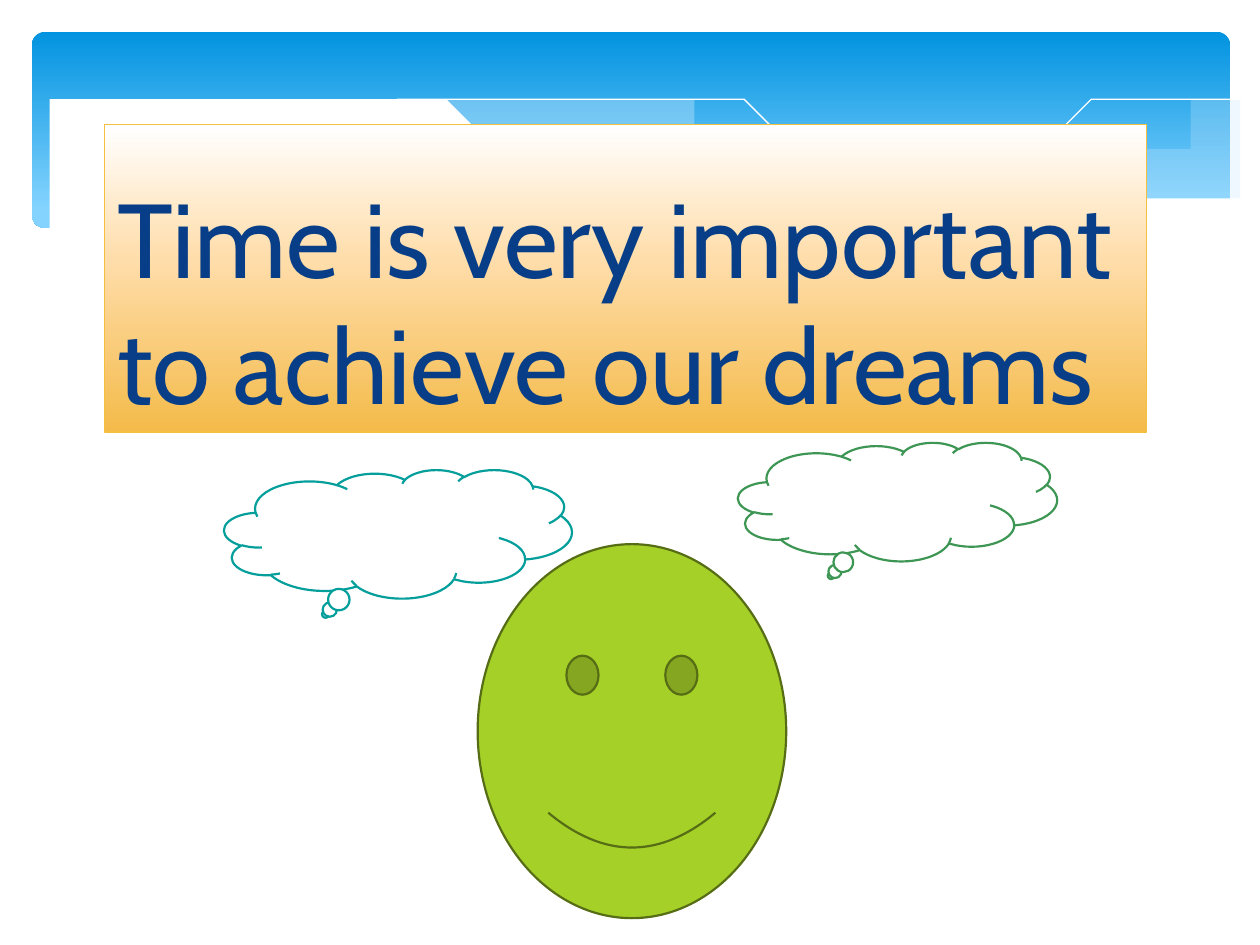
from dataclasses import dataclass
from itertools import chain
from typing import Optional

from lxml.etree import SubElement
from pptx import Presentation
from pptx.dml.color import RGBColor
from pptx.enum.shapes import MSO_SHAPE
from pptx.enum.text import MSO_ANCHOR, MSO_AUTO_SIZE, PP_ALIGN
from pptx.oxml.ns import qn
from pptx.util import Cm, Pt

Point = tuple[float, float]
Edge = list[Point]


@dataclass(frozen=True)
class Theme:
    font: str = "Cabin"
    title_size: int = 60
    title: str = "073E87"
    title_border: str = "F5C040"
    title_stops: tuple = ((0, "FFFFFF"), (44, "FFDDAA"), (100, "F4BB4A"))
    banner_stops: tuple = ((0, "0293E0"), (90, "83D3FE"))
    white: str = "FFFFFF"
    mist: str = "C6E7FC"
    face: str = "A5D028"
    face_line: str = "566D15"
    green: str = "3D9653"
    teal: str = "049E9B"


@dataclass(frozen=True)
class Figure:
    kind: MSO_SHAPE
    box: tuple[float, float, float, float]  # left, top, width, height in cm
    fill: str
    line: str


@dataclass(frozen=True)
class Wave:
    edges: list[Edge]  # each edge is a smooth curve through its points, in cm
    fill: Optional[str] = None
    line: Optional[str] = None
    opacity: int = 100
    closed: bool = True


THEME = Theme()

WAVES = [
    # Pale swell at the right
    Wave([[(24.82, 2.39), (23.42, 2.64), (21.89, 3), (19.81, 3.48), (16.81, 4.06)],
          [(16.81, 4.06), (18.26, 4.24), (19.86, 4.37), (21.23, 4.37), (22.61, 4.22),
           (23.8, 3.96), (24.82, 3.61)]],
         fill=THEME.mist, opacity=29),
    # Pale swell in the middle
    Wave([[(7.29, 2.18), (8.33, 2.06), (9.65, 2.03), (11.23, 2.11), (13.08, 2.34),
           (16, 2.95), (18.85, 3.61), (21.29, 4.06), (22.71, 4.24)],
          [(22.71, 4.24), (21.31, 4.39), (19.66, 4.37), (17.68, 4.19), (15.29, 3.81),
           (11.43, 2.95), (9.22, 2.46), (7.29, 2.18)]],
         fill=THEME.mist, opacity=40),
    # White hairlines
    Wave([[(7.87, 2.29), (8.74, 2.13), (10.59, 2.06), (12.42, 2.13), (14.78, 2.39),
           (17.68, 2.9), (20.22, 3.45), (23.06, 4.22)]],
         line=THEME.white, closed=False),
    Wave([[(15.6, 3.84), (17.68, 3.3), (19.74, 2.82), (22.02, 2.36), (23.5, 2.13),
           (24.8, 2.03)]],
         line=THEME.white, closed=False),
    # White wave that cuts off the banner
    Wave([[(0.58, 2.72), (1.17, 2.49), (2.16, 2.21), (3.35, 2.06), (4.9, 1.98),
           (6.88, 2.11), (8.64, 2.34), (11.35, 2.9), (14.1, 3.53), (16.46, 3.99),
           (18.9, 4.29), (20.9, 4.34), (22.53, 4.22), (23.88, 3.91), (24.82, 3.58)],
          [(24.82, 5.69), (0.58, 5.69)]],
         fill=THEME.white),
]

FIGURES = [
    Figure(MSO_SHAPE.SMILEY_FACE, (9.63, 10.97, 6.22, 7.54), THEME.face, THEME.face_line),
    Figure(MSO_SHAPE.CLOUD_CALLOUT, (14.88, 8.92, 6.43, 2.39), THEME.white, THEME.green),
    Figure(MSO_SHAPE.CLOUD_CALLOUT, (4.52, 9.47, 7.01, 2.59), THEME.white, THEME.teal),
]


def smooth(edge: Edge, steps: int = 5) -> Edge:
    """Catmull-Rom curve through the points of an edge."""
    padded = [edge[0], *edge, edge[-1]]
    curve = [edge[0]]
    for a, b, c, d in zip(padded, padded[1:], padded[2:], padded[3:]):
        for t in (i / steps for i in range(1, steps + 1)):
            curve.append(tuple(
                0.5 * (2 * q + (r - p) * t + (2 * p - 5 * q + 4 * r - s) * t**2
                       + (3 * q - p - 3 * r + s) * t**3)
                for p, q, r, s in zip(a, b, c, d)))
    return curve


def paint(sp, fill: Optional[str], line: Optional[str], width: float = 0) -> None:
    for part, color in ((sp.fill, fill), (sp.line.fill, line)):
        if color is None:
            part.background()
        else:
            part.solid()
            part.fore_color.rgb = RGBColor.from_string(color)
    if line is not None:
        sp.line.width = Pt(width)


def paint_gradient(sp, stops: tuple) -> None:
    """Vertical gradient with any number of stops."""
    sp.fill.gradient()
    sp.fill.gradient_angle = 270
    gs_list = sp._element.spPr.find(qn("a:gradFill")).find(qn("a:gsLst"))
    for gs in list(gs_list):
        gs_list.remove(gs)
    for position, color in stops:
        gs = SubElement(gs_list, qn("a:gs"), pos=str(position * 1000))
        SubElement(gs, qn("a:srgbClr"), val=color)


def add_figure(shapes, figure: Figure) -> None:
    sp = shapes.add_shape(figure.kind, *map(Cm, figure.box))
    sp.shadow.inherit = False
    paint(sp, figure.fill, figure.line, 1.25)


def add_wave(shapes, wave: Wave) -> None:
    start, *rest = chain.from_iterable(map(smooth, wave.edges))
    builder = shapes.build_freeform(*start, scale=Cm(1))
    builder.add_line_segments(rest, close=wave.closed)
    sp = builder.convert_to_shape()
    sp.shadow.inherit = False
    paint(sp, wave.fill, wave.line)
    if wave.opacity < 100:
        color = sp._element.spPr.find(qn("a:solidFill"))[0]
        SubElement(color, qn("a:alpha"), val=str(wave.opacity * 1000))


def add_banner(shapes) -> None:
    sp = shapes.add_shape(MSO_SHAPE.ROUNDED_RECTANGLE, Cm(0.64), Cm(0.64), Cm(24.16), Cm(3.96))
    sp.adjustments[0] = 0.07
    sp.shadow.inherit = False
    paint(sp, None, None)
    paint_gradient(sp, THEME.banner_stops)


def format_title(sp) -> None:
    sp.left, sp.top, sp.width, sp.height = map(Cm, (2.11, 2.51, 21, 6.2))
    paint(sp, None, THEME.title_border, 0.75)
    paint_gradient(sp, THEME.title_stops)
    tf = sp.text_frame
    tf.text = "Time is very important to achieve our dreams"
    tf.word_wrap = True
    tf.auto_size = MSO_AUTO_SIZE.NONE
    tf.vertical_anchor = MSO_ANCHOR.BOTTOM
    p = tf.paragraphs[0]
    p.alignment = PP_ALIGN.LEFT
    font = p.runs[0].font
    font.name = THEME.font
    font.size = Pt(THEME.title_size)
    font.color.rgb = RGBColor.from_string(THEME.title)


def main() -> None:
    prs = Presentation()
    prs.slide_width, prs.slide_height = Cm(25.4), Cm(19.05)
    s = prs.slides.add_slide(prs.slide_layouts[5])
    shapes = s.shapes

    # Banner and waves
    add_banner(shapes)
    for wave in WAVES:
        add_wave(shapes, wave)

    # Title, raised above the waves
    title = shapes.title
    format_title(title)
    shapes._spTree.append(title._element)

    # Face and thought clouds
    for figure in FIGURES:
        add_figure(shapes, figure)

    prs.save("out.pptx")


if __name__ == "__main__":
    main()
